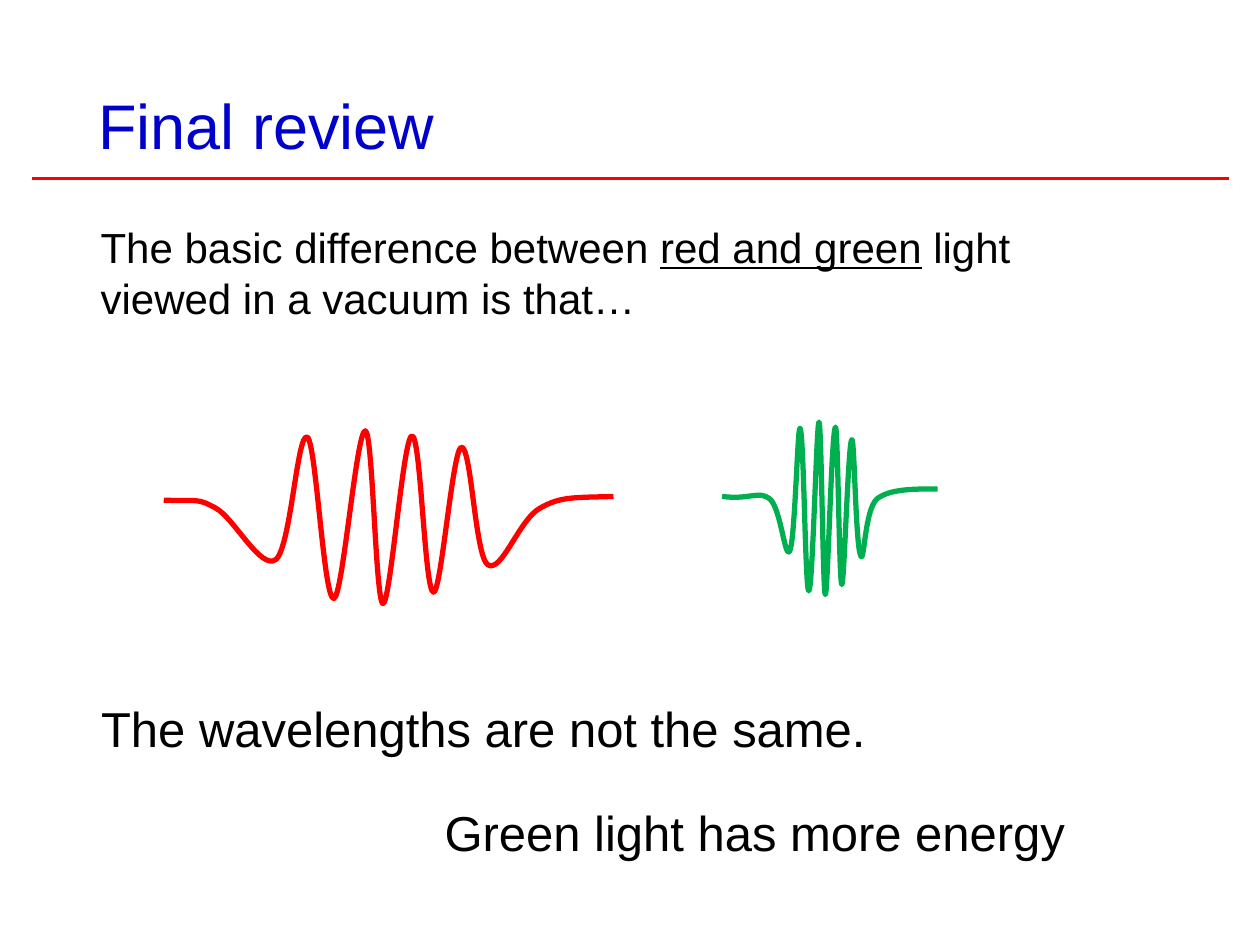
"""Build a review slide comparing the wavelengths of red and green light."""
import pptx
import pptx.dml.color
import pptx.enum.shapes
import pptx.enum.text
import pptx.oxml.ns
import pptx.util
from lxml import etree

Pt = pptx.util.Pt
qn = pptx.oxml.ns.qn
ALIGN = pptx.enum.text.PP_ALIGN
ANCHOR = pptx.enum.text.MSO_ANCHOR

RED_WAVE = [
    (93.6, 285.8),
    (113.8, 286.6), (112.3, 284.4), (123.1, 290.2),
    (133.9, 295.9), (149, 326.2), (157.7, 319.7),
    (166.3, 312.5), (169.9, 246.2), (175.7, 249.8),
    (180.7, 253.4), (185, 342.7), (190.8, 342),
    (195.8, 342), (203.8, 245.5), (208.8, 246.2),
    (213.1, 246.2), (214.6, 344.2), (218.9, 344.9),
    (223.2, 344.9), (230.4, 249.8), (235.4, 249.1),
    (240.5, 247.7), (242.6, 337.7), (247.7, 338.4),
    (252, 339.8), (258.5, 258.5), (263.5, 255.6),
    (269.3, 253.4), (271.4, 316.8), (278.6, 322.6),
    (286.6, 328.3), (296.6, 296.6), (308.9, 290.2),
    (320.4, 283.7), (327.6, 284.4), (350.6, 283.7),
]
GREEN_WAVE = [
    (412.6, 283.7),
    (428.4, 285.8), (433.4, 280.1), (439.9, 285.1),
    (446.4, 290.9), (448.6, 321.1), (451.4, 314.6),
    (454.3, 308.2), (455.8, 241.2), (457.2, 244.8),
    (459.4, 248.4), (460.1, 338.4), (462.2, 337.7),
    (464.4, 337), (466.6, 240.5), (468, 241.2),
    (469.4, 241.2), (470.2, 339.1), (471.6, 339.8),
    (473, 340.6), (475.2, 244.8), (477.4, 244.1),
    (478.8, 243.4), (479.5, 332.6), (481, 334.1),
    (482.4, 334.8), (484.6, 253.4), (486.7, 251.3),
    (488.2, 248.4), (488.9, 311.8), (491.8, 317.5),
    (493.9, 323.3), (493.9, 291.6), (501.1, 285.1),
    (508.3, 279.4), (522, 279.4), (535.7, 279.4),
]


def color(value):
    return pptx.dml.color.RGBColor.from_string(value)


def add_text(paragraph, text, font="Arial", size=24, fill="000000", underline=None):
    run = paragraph.add_run()
    run.text = text
    run.font.name = font
    run.font.size = Pt(size)
    run.font.color.rgb = color(fill)
    run.font.underline = underline


def bend_lines(shape):
    lines = list(shape._element.iter(qn("a:lnTo")))
    outline = lines[0].getparent()
    for index in range(0, len(lines), 3):
        curve = etree.SubElement(outline, qn("a:cubicBezTo"))
        for line in lines[index:index + 3]:
            curve.append(line[0])
            outline.remove(line)


class ReviewSlide:
    title_color = "0000CC"
    red = "FF0000"
    green = "00B050"

    def __init__(self, presentation):
        self.slide = presentation.slides.add_slide(presentation.slide_layouts[5])

    def place(self, shape, box, anchor):
        shape.left, shape.top, shape.width, shape.height = map(Pt, box)
        frame = shape.text_frame
        frame.word_wrap = True
        frame.auto_size = pptx.enum.text.MSO_AUTO_SIZE.NONE
        frame.vertical_anchor = anchor
        return frame.paragraphs[0]

    def title(self, text, box):
        paragraph = self.place(self.slide.shapes.title, box, ANCHOR.BOTTOM)
        paragraph.alignment = ALIGN.LEFT
        add_text(paragraph, text, size=36, fill=self.title_color)

    def text(self, parts, box, size, align=ALIGN.LEFT):
        shape = self.slide.shapes.add_textbox(*map(Pt, box))
        paragraph = self.place(shape, box, ANCHOR.TOP)
        paragraph.alignment = align
        for text, underline in parts:
            add_text(paragraph, text, size=size, underline=underline)

    def rule(self, left, right, top):
        connector = self.slide.shapes.add_connector(
            pptx.enum.shapes.MSO_CONNECTOR.STRAIGHT, Pt(left), Pt(top), Pt(right), Pt(top))
        connector.line.color.rgb = color(self.red)
        connector.line.width = Pt(1.5)
        etree.SubElement(connector._element.spPr, qn("a:effectLst"))

    def wave(self, points, stroke):
        start, *others = [(Pt(x), Pt(y)) for x, y in points]
        builder = self.slide.shapes.build_freeform(*start)
        builder.add_line_segments(others, close=False)
        shape = builder.convert_to_shape()
        bend_lines(shape)
        shape.shadow.inherit = False
        shape.fill.background()
        shape.line.color.rgb = color(stroke)
        shape.line.width = Pt(3)


def main():
    presentation = pptx.Presentation()
    presentation.slide_width, presentation.slide_height = Pt(720), Pt(540)
    review = ReviewSlide(presentation)
    review.rule(18, 702, 102)
    review.title("Final review", (49, 0, 301.7, 96.2))
    question = [
        ("The basic difference between ", None),
        ("red and green", True),
        (" light viewed in a vacuum is that…", None),
    ]
    review.text(question, (50.4, 123.1, 605.5, 94.3), 24)
    review.wave(RED_WAVE, review.red)
    review.wave(GREEN_WAVE, review.green)
    answers = [
        ("The wavelengths are not the same.", (31, 395.6, 490.3, 41)),
        ("Green light has more energy", (213.1, 455, 436.3, 41)),
    ]
    for answer, box in answers:
        review.text([(answer, None)], box, 28, align=ALIGN.CENTER)
    presentation.save("out.pptx")


if __name__ == "__main__":
    main()
